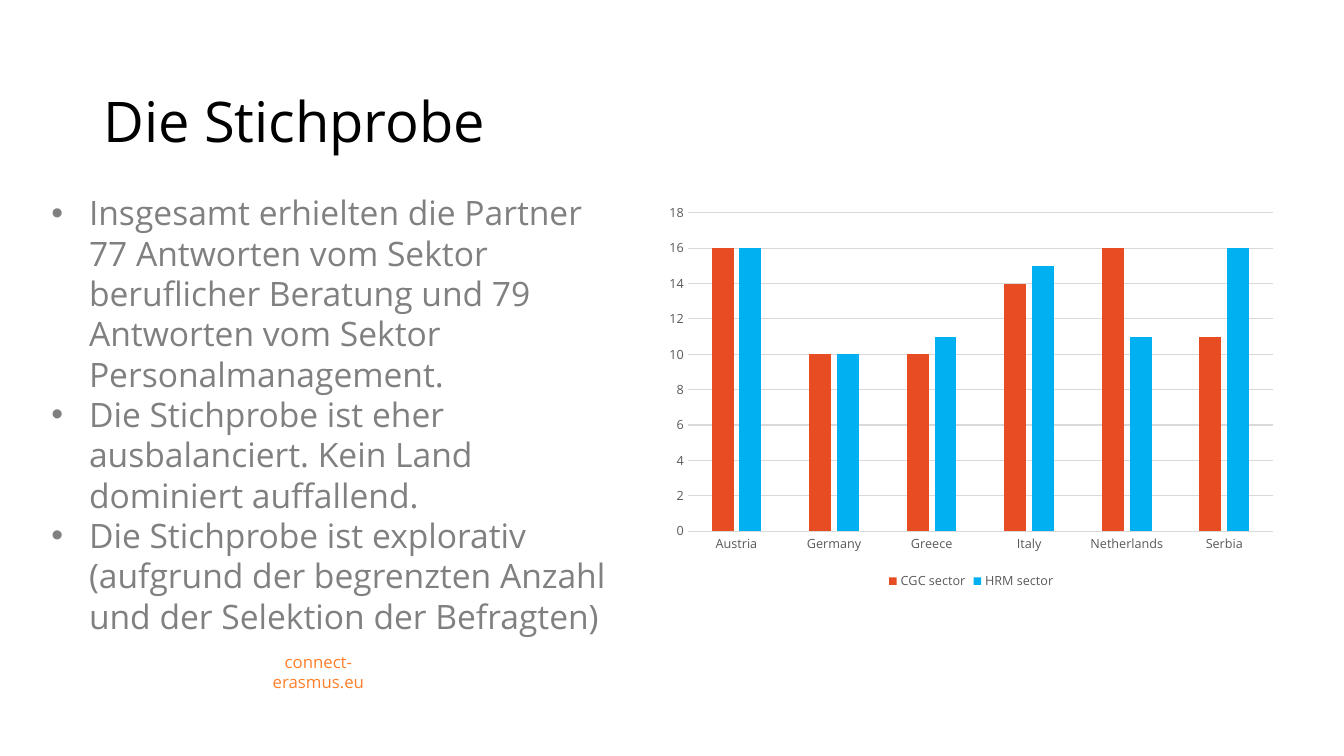
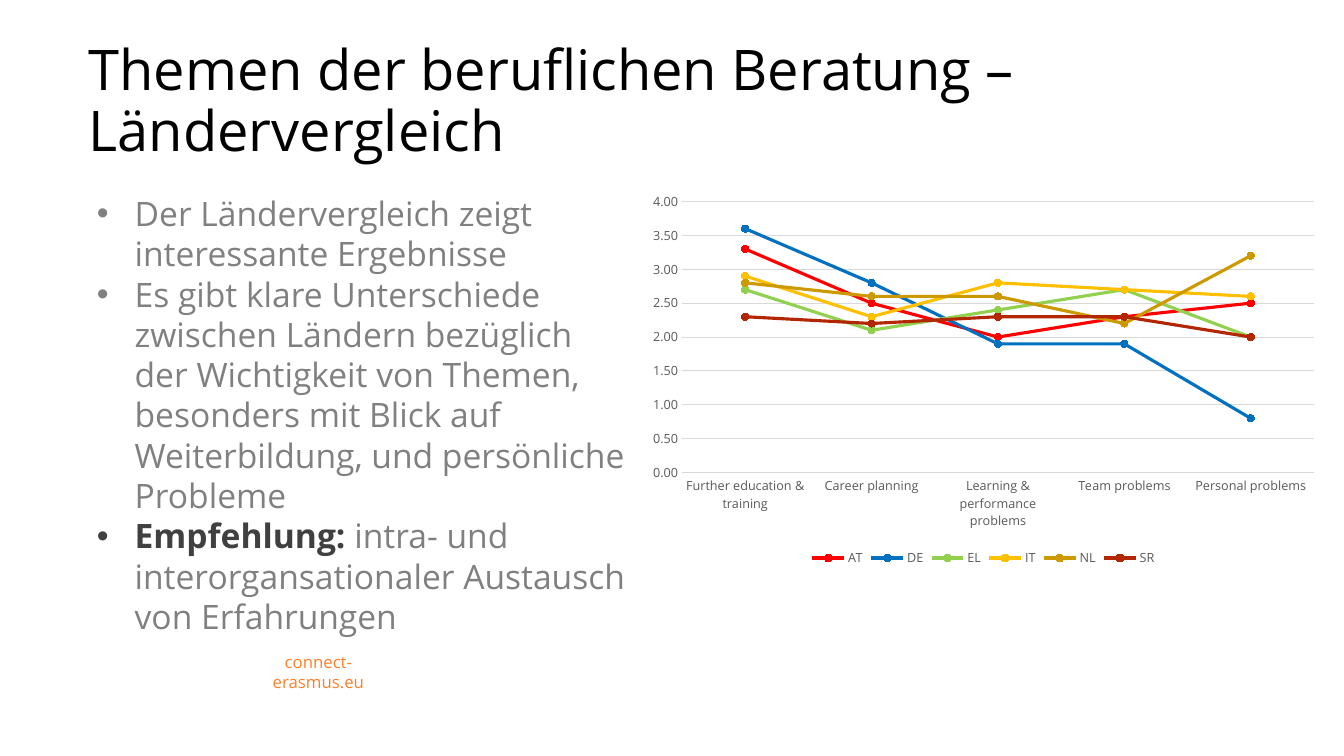
from dataclasses import dataclass

import pptx
import pptx.chart.data
import pptx.dml.color
import pptx.enum.chart
import pptx.enum.text
import pptx.oxml
import pptx.oxml.ns
import pptx.util

Cm = pptx.util.Cm
Pt = pptx.util.Pt


@dataclass(frozen=True)
class Theme:
    font: str = "Open Sans"
    title_size: int = 40
    body_size: int = 24
    footer_size: int = 12
    chart_size: int = 9
    title: str = "000000"
    body: str = "808080"
    emphasis: str = "404040"
    footer: str = "FF7F2A"
    label: str = "595959"
    grid: str = "D9D9D9"


THEME = Theme()
FOOTER = "connect-erasmus.eu"

SAMPLE_POINTS = [
    ("", "Insgesamt erhielten die Partner 77 Antworten vom Sektor beruflicher "
         "Beratung und 79 Antworten vom Sektor Personalmanagement."),
    ("", "Die Stichprobe ist eher ausbalanciert. Kein Land dominiert auffallend."),
    ("", "Die Stichprobe ist explorativ (aufgrund der begrenzten Anzahl und der "
         "Selektion der Befragten)"),
]
COUNTRIES = ["Austria", "Germany", "Greece", "Italy", "Netherlands", "Serbia"]
SECTORS = [
    ("CGC sector", "E84C22", [16, 10, 10, 14, 16, 11]),
    ("HRM sector", "00B0F0", [16, 10, 11, 15, 11, 16]),
]

TOPIC_POINTS = [
    ("", "Der Ländervergleich zeigt interessante Ergebnisse"),
    ("", "Es gibt klare Unterschiede zwischen Ländern bezüglich der Wichtigkeit von "
         "Themen, besonders mit Blick auf Weiterbildung, und persönliche Probleme"),
    ("Empfehlung: ", "intra- und interorgansationaler Austausch von Erfahrungen"),
]
TOPICS = ["Further education & training", "Career planning",
          "Learning & performance problems", "Team problems", "Personal problems"]
COUNTRY_RATINGS = [
    ("AT", "FF0000", [3.3, 2.5, 2, 2.3, 2.5]),
    ("DE", "0070C0", [3.6, 2.8, 1.9, 1.9, 0.8]),
    ("EL", "92D050", [2.7, 2.1, 2.4, 2.7, 2]),
    ("IT", "FFC000", [2.9, 2.3, 2.8, 2.7, 2.6]),
    ("NL", "CC9900", [2.8, 2.6, 2.6, 2.2, 3.2]),
    ("SR", "B22600", [2.3, 2.2, 2.3, 2.3, 2]),
]


def rgb(color):
    return pptx.dml.color.RGBColor.from_string(color)


def cm_box(box):
    return [Cm(length) for length in box]


def style_font(font, size, color, bold=False):
    font.name = THEME.font
    font.size = Pt(size)
    font.color.rgb = rgb(color)
    font.bold = bold


def place(placeholder, box, anchor):
    (placeholder.left, placeholder.top,
     placeholder.width, placeholder.height) = cm_box(box)
    frame = placeholder.text_frame
    frame.word_wrap = True
    frame.auto_size = pptx.enum.text.MSO_AUTO_SIZE.NONE
    frame.vertical_anchor = anchor
    return frame


def set_title(slide, text, box):
    frame = place(slide.shapes.title, box, pptx.enum.text.MSO_ANCHOR.BOTTOM)
    frame.text = text
    heading = frame.paragraphs[0]
    heading.alignment = pptx.enum.text.PP_ALIGN.LEFT
    heading.line_spacing = 0.9
    style_font(heading.runs[0].font, THEME.title_size, THEME.title)


def set_bullet(paragraph):
    properties = paragraph._p.get_or_add_pPr()
    properties.set("marL", str(Cm(0.95)))
    properties.set("indent", str(Cm(-0.95)))
    for tag, name, value in (("a:buFont", "typeface", "Arial"),
                             ("a:buChar", "char", "•")):
        mark = pptx.oxml.parse_xml(f"<{tag} {pptx.oxml.ns.nsdecls('a')}/>")
        mark.set(name, value)
        properties.append(mark)


def set_points(slide, points, box):
    frame = place(slide.placeholders[1], box, pptx.enum.text.MSO_ANCHOR.TOP)
    for index, (lead, statement) in enumerate(points):
        point = frame.add_paragraph() if index else frame.paragraphs[0]
        set_bullet(point)
        point.alignment = pptx.enum.text.PP_ALIGN.LEFT
        point.space_before = Pt(0)
        for text, color, bold in ((lead, THEME.emphasis, True),
                                  (statement, THEME.body, False)):
            if text:
                run = point.add_run()
                run.text = text
                style_font(run.font, THEME.body_size, color, bold)


def add_footer(slide):
    footer = slide.shapes.add_textbox(*cm_box((5.79, 16.54, 4.47, 0.76)))
    frame = footer.text_frame
    frame.word_wrap = True
    frame.vertical_anchor = pptx.enum.text.MSO_ANCHOR.MIDDLE
    frame.text = FOOTER
    address = frame.paragraphs[0]
    address.alignment = pptx.enum.text.PP_ALIGN.CENTER
    style_font(address.runs[0].font, THEME.footer_size, THEME.footer)


def style_line(line, color, width):
    line.color.rgb = rgb(color)
    line.width = Pt(width)


def style_axes(chart, top, step, number_format):
    for axis in (chart.category_axis, chart.value_axis):
        axis.major_tick_mark = pptx.enum.chart.XL_TICK_MARK.NONE
        axis.minor_tick_mark = pptx.enum.chart.XL_TICK_MARK.NONE
        style_font(axis.tick_labels.font, THEME.chart_size, THEME.label)
    style_line(chart.category_axis.format.line, THEME.grid, 0.75)
    scale = chart.value_axis
    scale.format.line.fill.background()
    scale.minimum_scale, scale.maximum_scale, scale.major_unit = 0, top, step
    scale.has_major_gridlines = True
    style_line(scale.major_gridlines.format.line, THEME.grid, 0.75)
    scale.tick_labels.number_format = number_format
    scale.tick_labels.number_format_is_linked = False


def add_chart(slide, kind, box, categories, groups, top, step, number_format):
    figures = pptx.chart.data.CategoryChartData(number_format=number_format)
    figures.categories = categories
    for name, _, values in groups:
        figures.add_series(name, values)
    chart = slide.shapes.add_chart(kind, *cm_box(box), figures).chart
    chart.has_title = False
    style_font(chart.font, THEME.chart_size, THEME.label)
    chart.has_legend = True
    chart.legend.position = pptx.enum.chart.XL_LEGEND_POSITION.BOTTOM
    chart.legend.include_in_layout = False
    style_font(chart.legend.font, THEME.chart_size, THEME.label)
    style_axes(chart, top, step, number_format)
    chart.plots[0].vary_by_categories = False
    return chart.plots[0]


def add_columns(slide, box, categories, groups, **scale):
    plot = add_chart(slide, pptx.enum.chart.XL_CHART_TYPE.COLUMN_CLUSTERED,
                     box, categories, groups, **scale)
    plot.gap_width = 219
    plot.overlap = -27
    for series, (_, color, _) in zip(plot.series, groups):
        series.format.fill.solid()
        series.format.fill.fore_color.rgb = rgb(color)


def add_lines(slide, box, categories, groups, **scale):
    plot = add_chart(slide, pptx.enum.chart.XL_CHART_TYPE.LINE_MARKERS,
                     box, categories, groups, **scale)
    for series, (_, color, _) in zip(plot.series, groups):
        series.smooth = False
        style_line(series.format.line, color, 2.25)
        marker = series.marker
        marker.style = pptx.enum.chart.XL_MARKER_STYLE.CIRCLE
        marker.size = 5
        marker.format.fill.solid()
        marker.format.fill.fore_color.rgb = rgb(color)
        style_line(marker.format.line, color, 0.75)


def add_slide(deck, title, title_box, points, points_box):
    slide = deck.slides.add_slide(deck.slide_layouts[1])
    set_title(slide, title, title_box)
    set_points(slide, points, points_box)
    add_footer(slide)
    return slide


def main():
    deck = pptx.Presentation()
    deck.slide_width, deck.slide_height = Cm(33.87), Cm(19.05)

    sample = add_slide(deck, "Die Stichprobe", (2.35, 2.11, 11.79, 1.91),
                       SAMPLE_POINTS, (1.04, 4.72, 14.96, 10.49))
    add_columns(sample, (16.55, 4.94, 15.85, 10.03), COUNTRIES, SECTORS,
                top=18, step=2, number_format="General")

    topics = add_slide(deck, "Themen der beruflichen Beratung – Ländervergleich",
                       (1.98, 0.18, 29.69, 4.06),
                       TOPIC_POINTS, (2.19, 4.73, 13.92, 11.3))
    add_lines(topics, (16.11, 4.66, 17.35, 9.73), TOPICS, COUNTRY_RATINGS,
              top=4, step=0.5, number_format="###0.00")

    deck.save("out.pptx")


if __name__ == "__main__":
    main()
